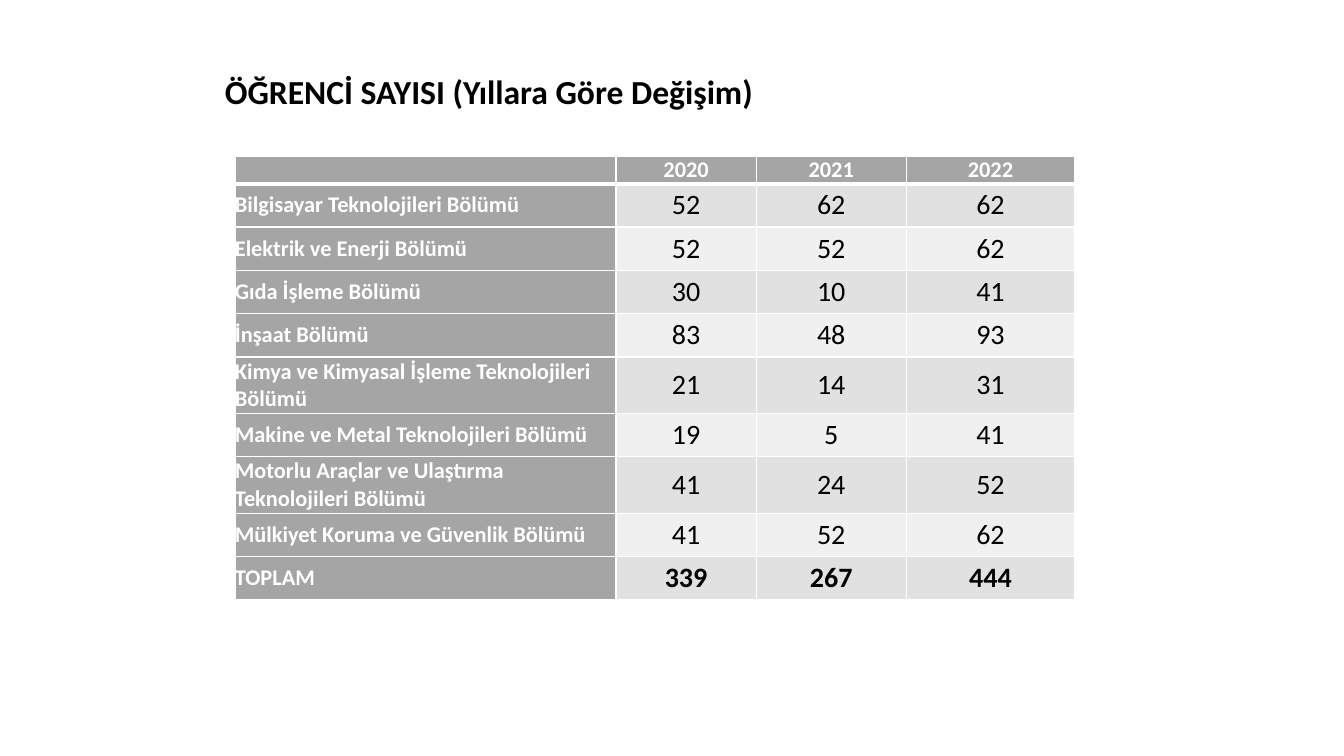
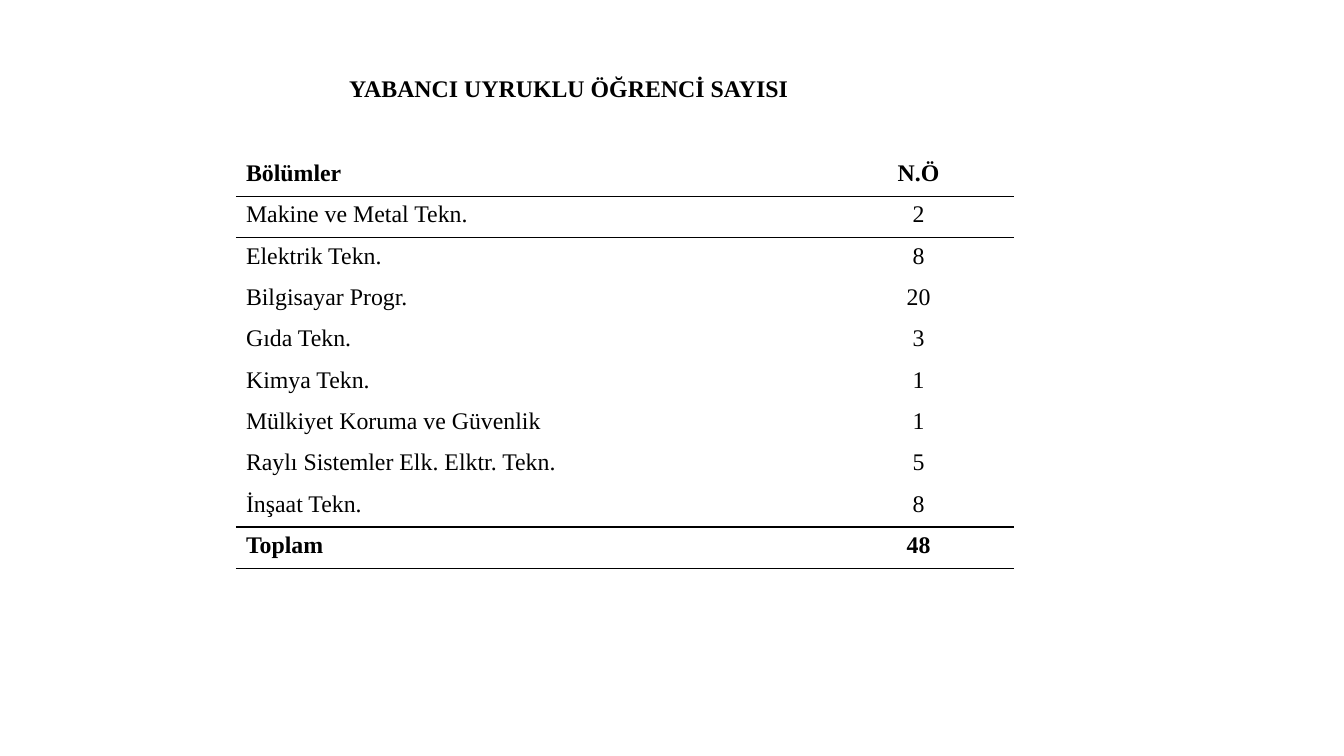
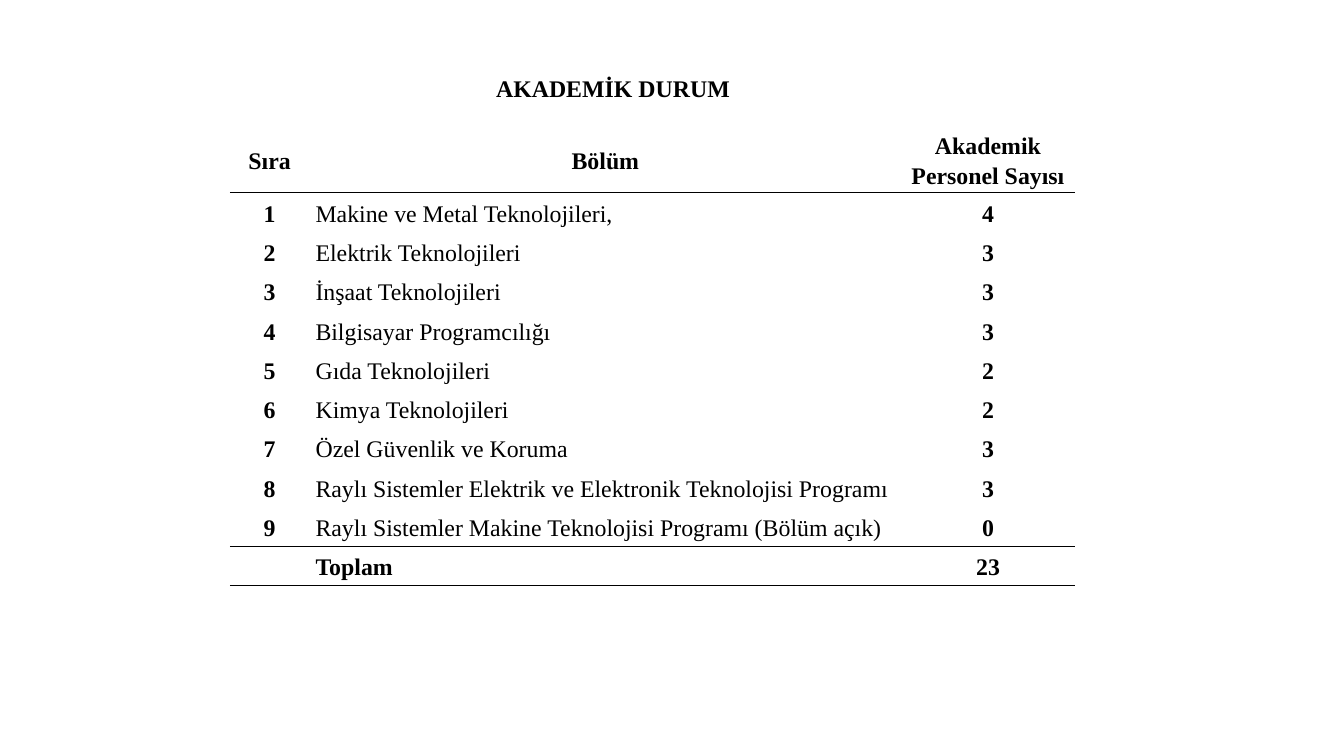
from lxml.etree import SubElement, Element
from pptx import Presentation
from pptx.dml.color import RGBColor
from pptx.enum.text import MSO_ANCHOR as Anchor, MSO_AUTO_SIZE as AutoSize, PP_ALIGN as Align
from pptx.oxml.ns import qn
from pptx.util import Inches, Pt

BLACK = RGBColor(0x00, 0x00, 0x00)
WHITE = RGBColor(0xFF, 0xFF, 0xFF)
HEADER_GRAY = RGBColor(0xA5, 0xA5, 0xA5)
BAND_GRAYS = [RGBColor(0xF0, 0xF0, 0xF0), RGBColor(0xE1, 0xE1, 0xE1)]
NO_STYLE = "{2D5ABB26-0587-4C30-8999-92F81FD0307C}"
SERIF = "Times New Roman"


def write(paragraph, text, color, font_format, align):
    paragraph.alignment = align
    if not text:
        paragraph._p.get_or_add_endParaRPr().set("sz", str(int(font_format["size"].pt * 100)))
        return
    run = paragraph.add_run()
    run.text = text
    for attribute, value in font_format.items():
        setattr(run.font, attribute, value)
    run.font.color.rgb = color


def add_borders(cell, color, widths):
    properties = cell._tc.get_or_add_tcPr()
    for position, (side, width) in enumerate(widths.items()):
        line = Element(qn(f"a:ln{side}"), w=str(Pt(width)))
        if width:
            fill = SubElement(line, qn("a:solidFill"))
            SubElement(fill, qn("a:srgbClr"), val=str(color))
        else:
            SubElement(line, qn("a:noFill"))
        properties.insert(position, line)


student_rows = [
    ["", "2020", "2021", "2022"],
    ["Bilgisayar Teknolojileri Bölümü", "52", "62", "62"],
    ["Elektrik ve Enerji Bölümü", "52", "52", "62"],
    ["Gıda İşleme Bölümü", "30", "10", "41"],
    ["İnşaat Bölümü", "83", "48", "93"],
    ["Kimya ve Kimyasal İşleme Teknolojileri Bölümü", "21", "14", "31"],
    ["Makine ve Metal Teknolojileri Bölümü", "19", "5", "41"],
    ["Motorlu Araçlar ve Ulaştırma Teknolojileri Bölümü", "41", "24", "52"],
    ["Mülkiyet Koruma ve Güvenlik Bölümü", "41", "52", "62"],
    ["TOPLAM", "339", "267", "444"],
]
foreign_rows = [
    ["Bölümler", "N.Ö"],
    ["Makine ve Metal Tekn.", "2"],
    ["Elektrik Tekn.", "8"],
    ["Bilgisayar Progr.", "20"],
    ["Gıda Tekn.", "3"],
    ["Kimya Tekn.", "1"],
    ["Mülkiyet Koruma ve Güvenlik", "1"],
    ["Raylı Sistemler Elk. Elktr. Tekn.", "5"],
    ["İnşaat Tekn.", "8"],
    ["Toplam", "48"],
]
staff_rows = [
    ["Sıra", "Bölüm", "Akademik Personel Sayısı"],
    ["1", "Makine ve Metal Teknolojileri,", "4"],
    ["2", "Elektrik Teknolojileri", "3"],
    ["3", "İnşaat Teknolojileri", "3"],
    ["4", "Bilgisayar Programcılığı", "3"],
    ["5", "Gıda Teknolojileri", "2"],
    ["6", "Kimya Teknolojileri", "2"],
    ["7", "Özel Güvenlik ve Koruma", "3"],
    ["8", "Raylı Sistemler Elektrik ve Elektronik Teknolojisi Programı", "3"],
    ["9", "Raylı Sistemler Makine Teknolojisi Programı (Bölüm açık)", "0"],
    ["", "Toplam", "23"],
]

pages = [
    dict(title="ÖĞRENCİ SAYISI (Yıllara Göre Değişim)", title_box=(2.13, 0.65, 5.49, 0.5),
         title_size=24, title_align=Align.LEFT, font="Calibri", rows=student_rows,
         origin=(2.33, 1.55), widths=[3.78, 1.39, 1.49, 1.67],
         heights=[0.27] + [0.43] * 4 + [0.56, 0.43, 0.56, 0.43, 0.43],
         shaded=True, label_column=0, header_align=Align.CENTER, bold_columns={0},
         rules={row: 1 for row in range(-1, 10)} | {0: 3}, rule_color=WHITE,
         anchor=Anchor.MIDDLE, margins=(0, 0), spacing=1.0),
    dict(title="YABANCI UYRUKLU ÖĞRENCİ SAYISI", title_box=(1.94, 0.68, 7.4, 0.39),
         title_size=17, title_align=Align.CENTER, font=SERIF, rows=foreign_rows,
         origin=(2.34, 1.54), widths=[5.82, 1.9], heights=[0.41] * 10,
         shaded=False, label_column=0, header_align=Align.LEFT, bold_columns=set(),
         rules={0: 1, 1: 1, 8: 1, 9: 1}, rule_color=BLACK,
         anchor=Anchor.TOP, margins=(0.1, 0.05), spacing=1.0),
    dict(title="AKADEMİK DURUM", title_box=(2.38, 0.68, 7.4, 0.39),
         title_size=17, title_align=Align.CENTER, font=SERIF, rows=staff_rows,
         origin=(2.28, 1.25), widths=[0.79, 5.87, 1.72], heights=[0.66] + [0.39] * 10,
         shaded=False, label_column=1, header_align=Align.CENTER, bold_columns={0, 2},
         rules={0: 1, 9: 1, 10: 1}, rule_color=BLACK,
         anchor=Anchor.MIDDLE, margins=(0.06, 0), spacing=1.15),
]

deck = Presentation()
deck.slide_width, deck.slide_height = Inches(13.33), Inches(7.5)

for page in pages:
    slide = deck.slides.add_slide(deck.slide_layouts[5])
    title = slide.shapes.title
    for attribute, value in zip(("left", "top", "width", "height"), page["title_box"]):
        setattr(title, attribute, Inches(value))
    frame_format = dict(word_wrap=True, auto_size=AutoSize.NONE, vertical_anchor=Anchor.TOP)
    for attribute, value in frame_format.items():
        setattr(title.text_frame, attribute, value)
    write(title.text_frame.paragraphs[0], page["title"], BLACK,
          dict(name=page["font"], size=Pt(page["title_size"]), bold=True), page["title_align"])

    rows, widths, heights = page["rows"], page["widths"], page["heights"]
    left, top = page["origin"]
    frame = slide.shapes.add_table(len(rows), len(widths), Inches(left), Inches(top),
                                   Inches(sum(widths)), Inches(sum(heights)))
    table = frame.table
    table.first_row = table.horz_banding = False
    table._tbl.tblPr.find(qn("a:tableStyleId")).text = NO_STYLE
    for column, width in zip(table.columns, widths):
        column.width = Inches(width)
    for row, height in zip(table.rows, heights):
        row.height = Inches(height)

    side_margin, end_margin = map(Inches, page["margins"])
    cell_format = dict(vertical_anchor=page["anchor"], margin_left=side_margin,
                       margin_right=side_margin, margin_top=end_margin, margin_bottom=end_margin)
    shaded, rules = page["shaded"], page["rules"]
    for r, texts in enumerate(rows):
        for c, text in enumerate(texts):
            cell = table.cell(r, c)
            for attribute, value in cell_format.items():
                setattr(cell, attribute, value)

            heading = shaded and (r == 0 or c == 0)
            if shaded:
                cell.fill.solid()
                cell.fill.fore_color.rgb = HEADER_GRAY if heading else BAND_GRAYS[r % 2]
            else:
                cell.fill.background()

            align = Align.CENTER
            if c == page["label_column"]:
                align = page["header_align"] if r == 0 else Align.LEFT
            size = (16 if heading else 20) if shaded else 17
            bold = r in (0, len(rows) - 1) or c in page["bold_columns"]
            paragraph = cell.text_frame.paragraphs[0]
            paragraph.line_spacing = page["spacing"]
            write(paragraph, text, WHITE if heading else BLACK,
                  dict(name=page["font"], size=Pt(size), bold=bold), align)

            side = 1 if shaded else 0
            add_borders(cell, page["rule_color"],
                        dict(L=side, R=side, T=rules.get(r - 1, 0), B=rules.get(r, 0)))

deck.save("out.pptx")
